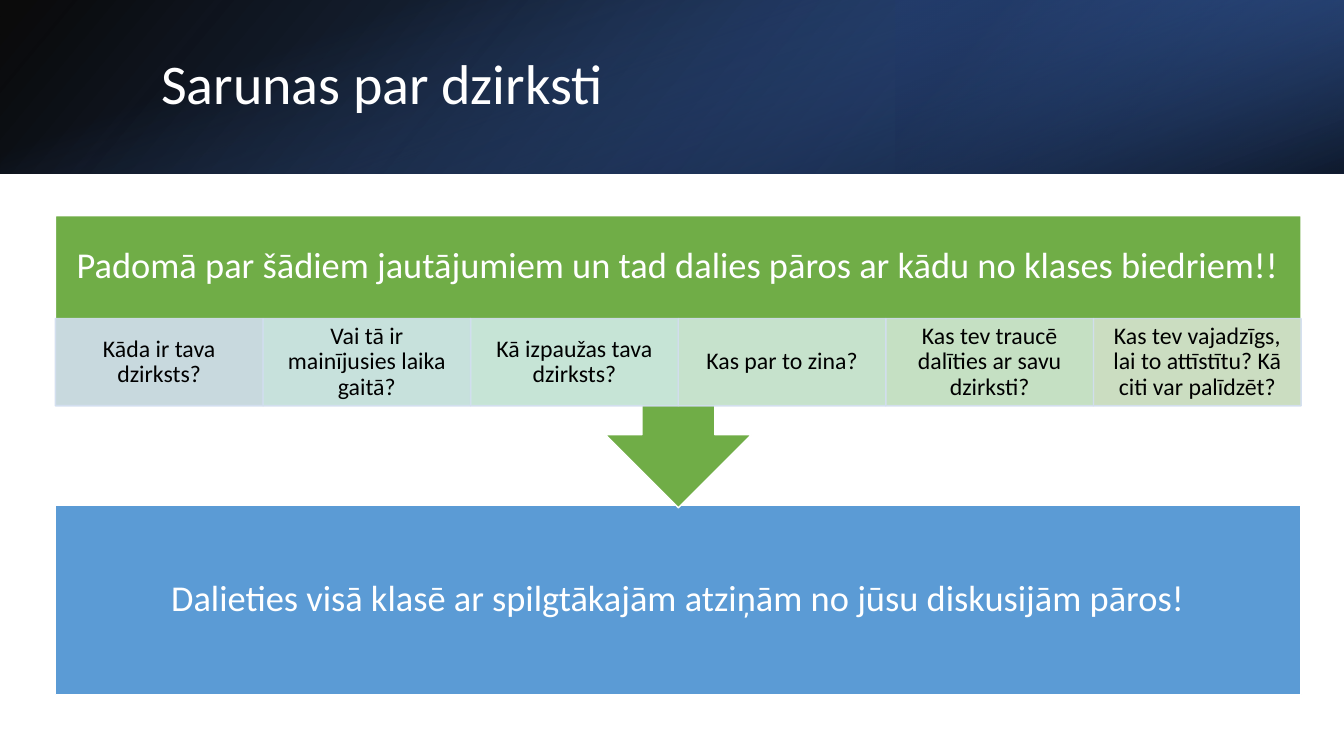
"""Build the slide "Sarunas par dzirksti": six questions for pairs, then sharing with the class."""
from lxml.etree import SubElement
from pptx import Presentation
from pptx.dml.color import RGBColor
from pptx.enum.shapes import MSO_SHAPE as Preset
from pptx.enum.text import MSO_ANCHOR as Anchor, PP_ALIGN as Align
from pptx.oxml.ns import qn
from pptx.util import Pt

TITLE = "Sarunas par dzirksti"
PAIR_TASK = "Padomā par šādiem jautājumiem un tad dalies pāros ar kādu no klases biedriem!!"
QUESTIONS = [
    ("Kāda ir tava dzirksts?", "D2DEEF"),
    ("Vai tā ir mainījusies laika gaitā?", "D1E7ED"),
    ("Kā izpaužas tava dzirksts?", "D0EBE6"),
    ("Kas par to zina?", "D0E8DB"),
    ("Kas tev traucē dalīties ar savu dzirksti?", "CFE6D1"),
    ("Kas tev vajadzīgs, lai to attīstītu? Kā citi var palīdzēt?", "D5E3CF"),
]
CLASS_TASK = "Dalieties visā klasē ar spilgtākajām atziņām no jūsu diskusijām pāros!"

THEME = {
    "font": "Calibri", "title_size": 40, "task_size": 26, "question_size": 17,
    "light": "FFFFFF", "dark": "000000", "pair": "70AD47", "class": "5B9BD5",
    "question_line": "D2DEEF", "question_alpha": 90,
}
SLIDE_W, SLIDE_H, BAND_H = 960, 540, 124
LEFT, WIDTH = 39.6, 889.8
PAIR_TOP, PAIR_H, PAIR_HEAD_H = 154.1, 208.6, 73.4
QUESTION_H = 62.4
CLASS_TOP, CLASS_H = 360.7, 135.4

BAND_LAYERS = [
    ((0, 0, SLIDE_W, BAND_H), 0, True, 140,
     [(0, "000000", 96), (100, "2F5597", 100)]),
    ((SLIDE_W * 2 / 3, 0, SLIDE_W / 3, BAND_H), 180, True, 320,
     [(19, "203864", 68), (100, "4472C4", 79)]),
    (((SLIDE_W - BAND_H) / 2, (BAND_H - SLIDE_W) / 2, BAND_H, SLIDE_W), 90, False, 340,
     [(23, "4472C4", 0), (99, "000000", 74)]),
]


def add_alpha(color, percent):
    SubElement(color, qn("a:alpha"), val=str(percent * 1000))


def add_block(slide, preset, box, fill, line, alpha=100):
    block = slide.shapes.add_shape(preset, *map(Pt, box))
    block.shadow.inherit = False
    block.fill.solid()
    block.fill.fore_color.rgb = RGBColor.from_string(fill)
    block.line.color.rgb = RGBColor.from_string(line)
    block.line.width = Pt(1)
    if alpha < 100:
        for color in block._element.spPr.iter(qn("a:srgbClr")):
            add_alpha(color, alpha)
    return block


def add_band_layer(slide, box, rotation, flipped, angle, stops):
    layer = slide.shapes.add_shape(Preset.RECTANGLE, *map(Pt, box))
    layer.shadow.inherit = False
    layer.rotation = rotation
    layer.line.fill.background()
    if flipped:
        layer._element.spPr.find(qn("a:xfrm")).set("flipH", "1")
    layer.fill.gradient()
    gradient = layer._element.spPr.find(qn("a:gradFill"))
    stop_list = gradient.find(qn("a:gsLst"))
    for preset_stop in list(stop_list):
        stop_list.remove(preset_stop)
    for position, color, alpha in stops:
        stop = SubElement(stop_list, qn("a:gs"), pos=str(position * 1000))
        add_alpha(SubElement(stop, qn("a:srgbClr"), val=color), alpha)
    direction = gradient.find(qn("a:lin"))
    direction.set("ang", str(angle * 60000))
    direction.set("scaled", "0")


def write(holder, text, size, color, align=Align.CENTER, margins=(14.2, 14.2)):
    frame = holder.text_frame
    frame.word_wrap = True
    frame.vertical_anchor = Anchor.MIDDLE
    frame.margin_left = frame.margin_right = Pt(margins[0])
    frame.margin_top = frame.margin_bottom = Pt(margins[1])
    paragraph = frame.paragraphs[0]
    paragraph.text = text
    paragraph.alignment = align
    paragraph.line_spacing = 0.9
    paragraph.font.name = THEME["font"]
    paragraph.font.size = Pt(size)
    paragraph.font.color.rgb = RGBColor.from_string(color)


def main():
    deck = Presentation()
    deck.slide_width, deck.slide_height = Pt(SLIDE_W), Pt(SLIDE_H)
    slide = deck.slides.add_slide(deck.slide_layouts[6])
    light = THEME["light"]

    for layer in BAND_LAYERS:
        add_band_layer(slide, *layer)
    title = slide.shapes.add_textbox(Pt(108), Pt(27.4), Pt(790.6), Pt(69.1))
    write(title, TITLE, THEME["title_size"], light, Align.LEFT, (7.2, 3.6))

    class_block = add_block(slide, Preset.RECTANGLE, (LEFT, CLASS_TOP, WIDTH, CLASS_H),
                            THEME["class"], light)
    write(class_block, CLASS_TASK, THEME["task_size"], light)

    pair_block = add_block(slide, Preset.UP_ARROW_CALLOUT, (LEFT, PAIR_TOP, WIDTH, PAIR_H),
                           THEME["pair"], light)
    pair_block.rotation = 180
    pair_head = slide.shapes.add_textbox(Pt(LEFT), Pt(PAIR_TOP), Pt(WIDTH), Pt(PAIR_HEAD_H))
    write(pair_head, PAIR_TASK, THEME["task_size"], light)

    question_w = WIDTH / len(QUESTIONS)
    for column, (question, fill) in enumerate(QUESTIONS):
        box = (LEFT + column * question_w, PAIR_TOP + PAIR_HEAD_H, question_w, QUESTION_H)
        cell = add_block(slide, Preset.RECTANGLE, box, fill,
                         THEME["question_line"], THEME["question_alpha"])
        write(cell, question, THEME["question_size"], THEME["dark"], margins=(9.4, 1.4))

    deck.save("out.pptx")


if __name__ == "__main__":
    main()
